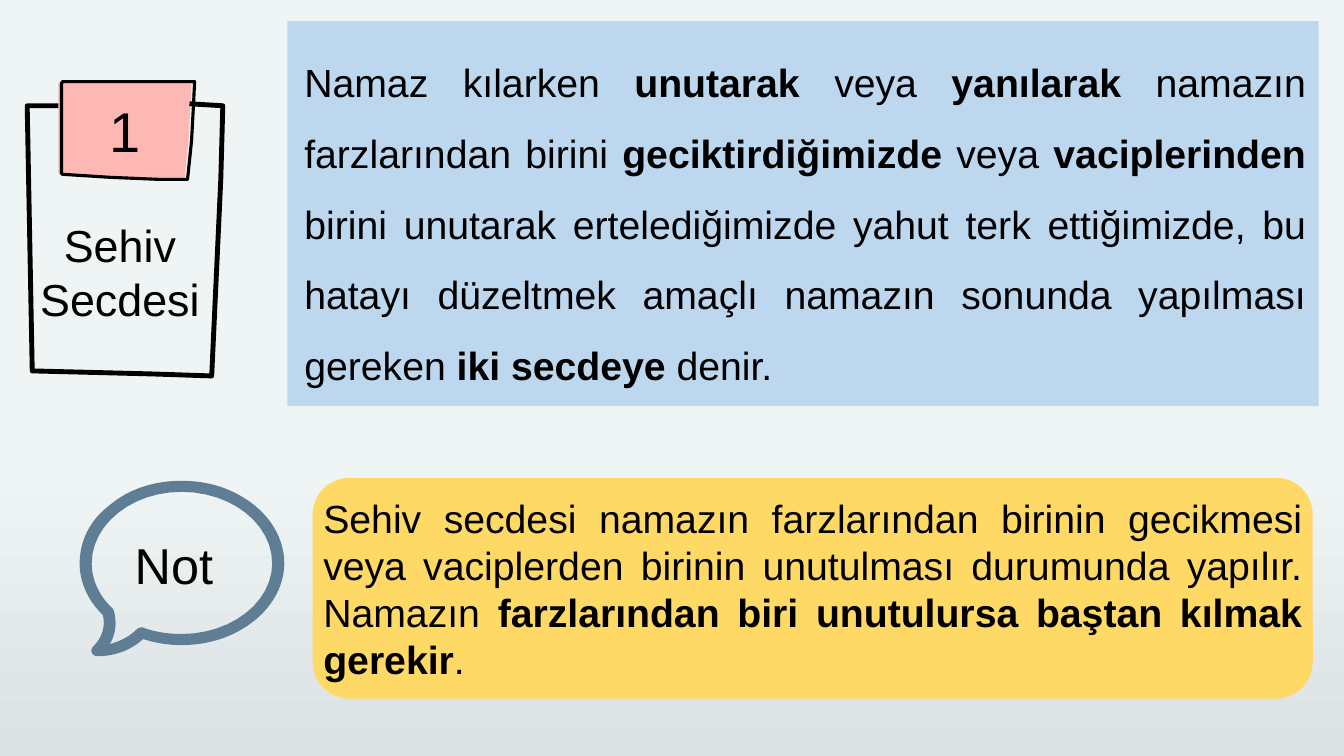
from dataclasses import dataclass
from typing import Optional

from pptx import Presentation
from pptx.dml.color import RGBColor
from pptx.enum.shapes import MSO_SHAPE
from pptx.enum.text import MSO_ANCHOR, MSO_AUTO_SIZE, PP_ALIGN
from pptx.util import Inches, Pt

BLACK = RGBColor(0x00, 0x00, 0x00)
PINK = RGBColor(0xFE, 0xB8, 0xB3)
BLUE = RGBColor(0xBD, 0xD7, 0xEE)
YELLOW = RGBColor(0xFF, 0xD9, 0x66)
SLATE = RGBColor(0x5F, 0x7D, 0x95)
PALE = RGBColor(0xEF, 0xF4, 0xF5)
GREY = RGBColor(0xDC, 0xE1, 0xE4)
FONT = "Arial"

Point = tuple[float, float]
Curve = tuple[Point, Point, Point]


@dataclass
class Outline:
    contours: list[list[Point]]
    closed: bool = True
    fill: Optional[RGBColor] = None
    line: Optional[RGBColor] = None
    width: float = 2.25


@dataclass
class Label:
    text: str
    left: float
    top: float
    width: float
    height: float
    size: int


def style(shape, fill: Optional[RGBColor], line: Optional[RGBColor] = None, width: float = 0) -> None:
    shape.shadow.inherit = False
    if fill is None:
        shape.fill.background()
    else:
        shape.fill.solid()
        shape.fill.fore_color.rgb = fill
    if line is None:
        shape.line.fill.background()
    else:
        shape.line.color.rgb = line
        shape.line.width = Pt(width)


def draw_outline(page, outline: Outline):
    # The builder rounds its points, so they are given in whole EMU
    first, *others = [[(Inches(x), Inches(y)) for x, y in contour]
                      for contour in outline.contours]
    builder = page.shapes.build_freeform(*first[0])
    builder.add_line_segments(first[1:], close=outline.closed)
    for contour in others:
        builder.move_to(*contour[0])
        builder.add_line_segments(contour[1:], close=outline.closed)
    shape = builder.convert_to_shape()
    style(shape, outline.fill, outline.line, outline.width)
    return shape


def flatten(start: Point, curves: list[Curve], steps: int = 12) -> list[Point]:
    """Turn a chain of cubic curves into points."""
    points = [start]
    for control_a, control_b, end in curves:
        begin = points[-1]
        for step in range(1, steps + 1):
            t = step / steps
            u = 1 - t
            points.append(tuple(
                u**3 * a + 3 * u * u * t * b + 3 * u * t * t * c + t**3 * d
                for a, b, c, d in zip(begin, control_a, control_b, end)))
    return points


def write(shape, text: str, *, size: int, align: PP_ALIGN = PP_ALIGN.CENTER,
          anchor: MSO_ANCHOR = MSO_ANCHOR.TOP, inset: tuple[float, float] = (0, 0),
          spacing: Optional[float] = None, grow: bool = False) -> None:
    """Fill a shape with one paragraph; text between asterisks is bold."""
    frame = shape.text_frame
    frame.word_wrap = True
    frame.auto_size = MSO_AUTO_SIZE.SHAPE_TO_FIT_TEXT if grow else MSO_AUTO_SIZE.NONE
    frame.vertical_anchor = anchor
    frame.margin_left = frame.margin_right = Inches(inset[0])
    frame.margin_top = frame.margin_bottom = Inches(inset[1])
    para = frame.paragraphs[0]
    para.alignment = align
    if spacing:
        para.line_spacing = spacing
    for index, part in enumerate(text.split("*")):
        span = para.add_run()
        span.text = part
        span.font.name = FONT
        span.font.size = Pt(size)
        span.font.bold = index % 2 == 1
        span.font.color.rgb = BLACK


def add_label(page, label: Label) -> None:
    box = page.shapes.add_textbox(Inches(label.left), Inches(label.top),
                                  Inches(label.width), Inches(label.height))
    write(box, label.text, size=label.size, grow=True)


def add_panel(page, kind: MSO_SHAPE, left: float, top: float, width: float,
              height: float, fill: RGBColor):
    panel = page.shapes.add_shape(kind, Inches(left), Inches(top), Inches(width), Inches(height))
    style(panel, fill)
    return panel


TAB = [(0.59, 0.81), (0.58, 0.83), (0.58, 1.72), (0.59, 1.73), (1.07, 1.76),
       (1.55, 1.78), (1.83, 1.78), (1.87, 1.4), (1.89, 1.03), (1.9, 0.81)]
FRAME = [(1.88, 1.03), (2.21, 1.05), (2.19, 1.78), (2.1, 3.73), (1.5, 3.71),
         (0.32, 3.68), (0.27, 1.05), (0.58, 1.05)]
BUBBLE_INNER = flatten((1.8, 4.88), [
    ((2.3, 4.88), (2.7, 5.2), (2.7, 5.59)),
    ((2.7, 5.97), (2.3, 6.29), (1.8, 6.29)),
    ((1.67, 6.29), (1.54, 6.27), (1.43, 6.23)),
    ((1.41, 6.22), (1.39, 6.22), (1.36, 6.24)),
    ((1.29, 6.31), (1.2, 6.36), (1.09, 6.39)),
    ((1.15, 6.29), (1.16, 6.17), (1.13, 6.06)),
    ((1.13, 6.05), (1.12, 6.05), (1.12, 6.04)),
    ((0.98, 5.91), (0.91, 5.75), (0.91, 5.59)),
    ((0.91, 5.2), (1.31, 4.88), (1.8, 4.88)),
])
BUBBLE_OUTER = flatten((1.8, 4.77), [
    ((1.53, 4.77), (1.28, 4.85), (1.09, 5.01)),
    ((0.89, 5.16), (0.79, 5.37), (0.79, 5.59)),
    ((0.79, 5.77), (0.87, 5.96), (1.02, 6.1)),
    ((1.05, 6.22), (1.01, 6.33), (0.92, 6.42)),
    ((0.89, 6.45), (0.91, 6.51), (0.97, 6.51)),
    ((1.14, 6.51), (1.3, 6.45), (1.42, 6.34)),
    ((1.54, 6.38), (1.67, 6.4), (1.8, 6.4)),
    ((2.07, 6.4), (2.32, 6.32), (2.52, 6.16)),
    ((2.71, 6.01), (2.82, 5.8), (2.82, 5.59)),
    ((2.82, 5.37), (2.71, 5.16), (2.52, 5.01)),
    ((2.32, 4.85), (2.07, 4.77), (1.8, 4.77)),
])
DEFINITION = (
    "Namaz kılarken *unutarak* veya *yanılarak* namazın farzlarından birini "
    "*geciktirdiğimizde* veya *vaciplerinden* birini unutarak ertelediğimizde yahut "
    "terk ettiğimizde, bu hatayı düzeltmek amaçlı namazın sonunda yapılması gereken "
    "*iki secdeye *denir.")
NOTE = (
    "Sehiv secdesi namazın farzlarından birinin gecikmesi veya vaciplerden birinin "
    "unutulması durumunda yapılır. Namazın *farzlarından biri unutulursa baştan "
    "kılmak gerekir*.")


def main() -> None:
    deck = Presentation()
    deck.slide_width, deck.slide_height = Inches(13.33), Inches(7.5)
    page = deck.slides.add_slide(deck.slide_layouts[6])

    # Background gradient, top to bottom
    backdrop = page.background.fill
    backdrop.gradient()
    backdrop.gradient_angle = 270
    for stop, position, colour in zip(backdrop.gradient_stops, (0.62, 1), (PALE, GREY)):
        stop.position = position
        stop.color.rgb = colour

    # Numbered card
    tab = draw_outline(page, Outline([TAB], fill=PINK))
    write(tab, "1", size=40, anchor=MSO_ANCHOR.MIDDLE, inset=(0.1, 0.1))
    draw_outline(page, Outline([[(x + 0.03, y) for x, y in TAB]], line=BLACK))
    draw_outline(page, Outline([FRAME], closed=False, line=BLACK, width=3.5))
    add_label(page, Label("Sehiv Secdesi", 0.28, 2.16, 1.82, 1.08, 32))

    # Definition
    add_panel(page, MSO_SHAPE.RECTANGLE, 2.85, 0.21, 10.23, 3.82, BLUE)
    box = page.shapes.add_textbox(Inches(2.92), Inches(0.3), Inches(10.13), Inches(3.64))
    write(box, DEFINITION, size=28, align=PP_ALIGN.JUSTIFY, inset=(0.1, 0.05),
          spacing=1.5, grow=True)

    # Note with its speech bubble
    panel = add_panel(page, MSO_SHAPE.ROUNDED_RECTANGLE, 3.1, 4.74, 9.92, 2.19, YELLOW)
    write(panel, NOTE, size=28, align=PP_ALIGN.JUSTIFY, anchor=MSO_ANCHOR.MIDDLE)
    draw_outline(page, Outline([BUBBLE_INNER, BUBBLE_OUTER], fill=SLATE))
    add_label(page, Label("Not", 1.12, 5.3, 1.21, 0.61, 36))

    deck.save("out.pptx")


if __name__ == "__main__":
    main()
